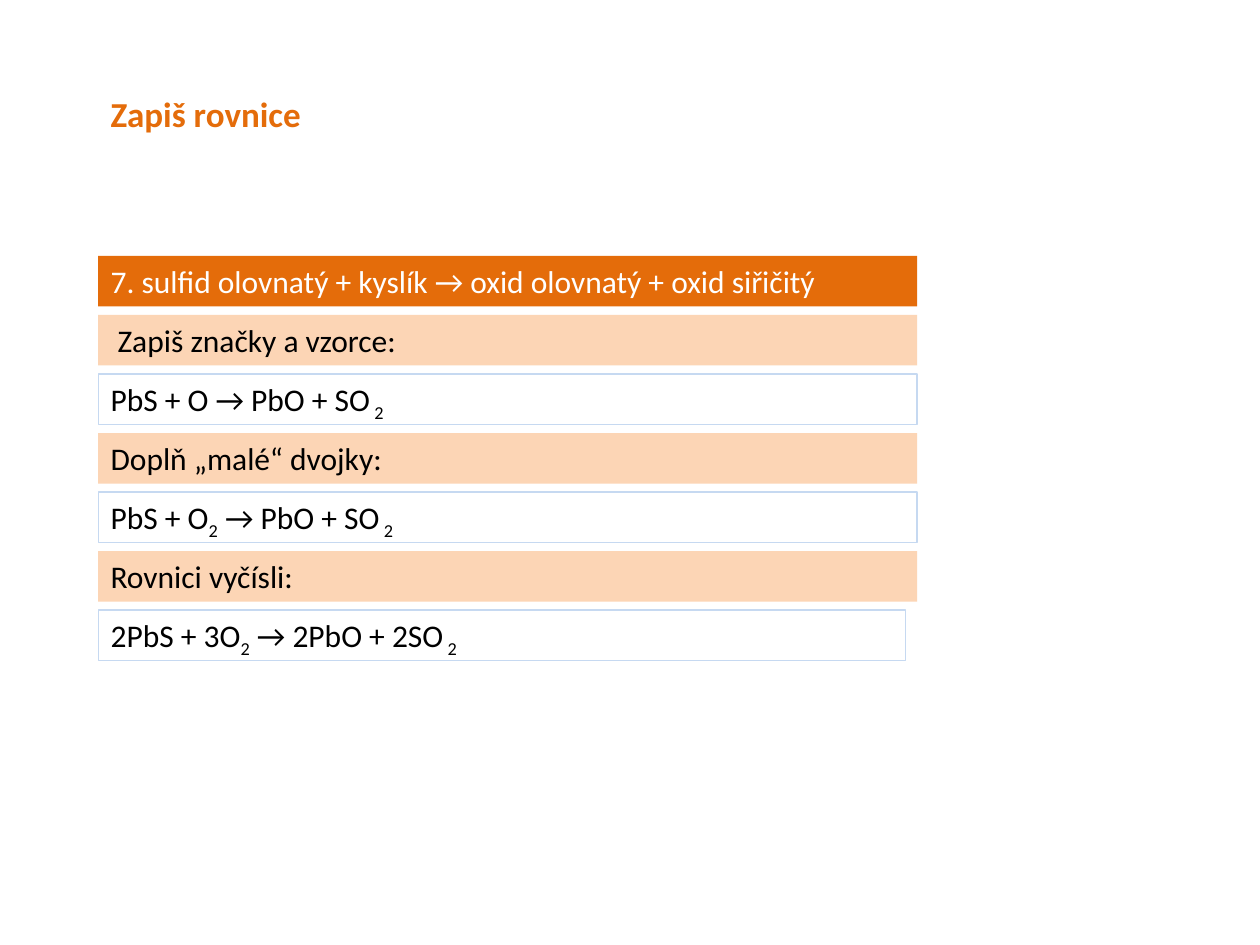
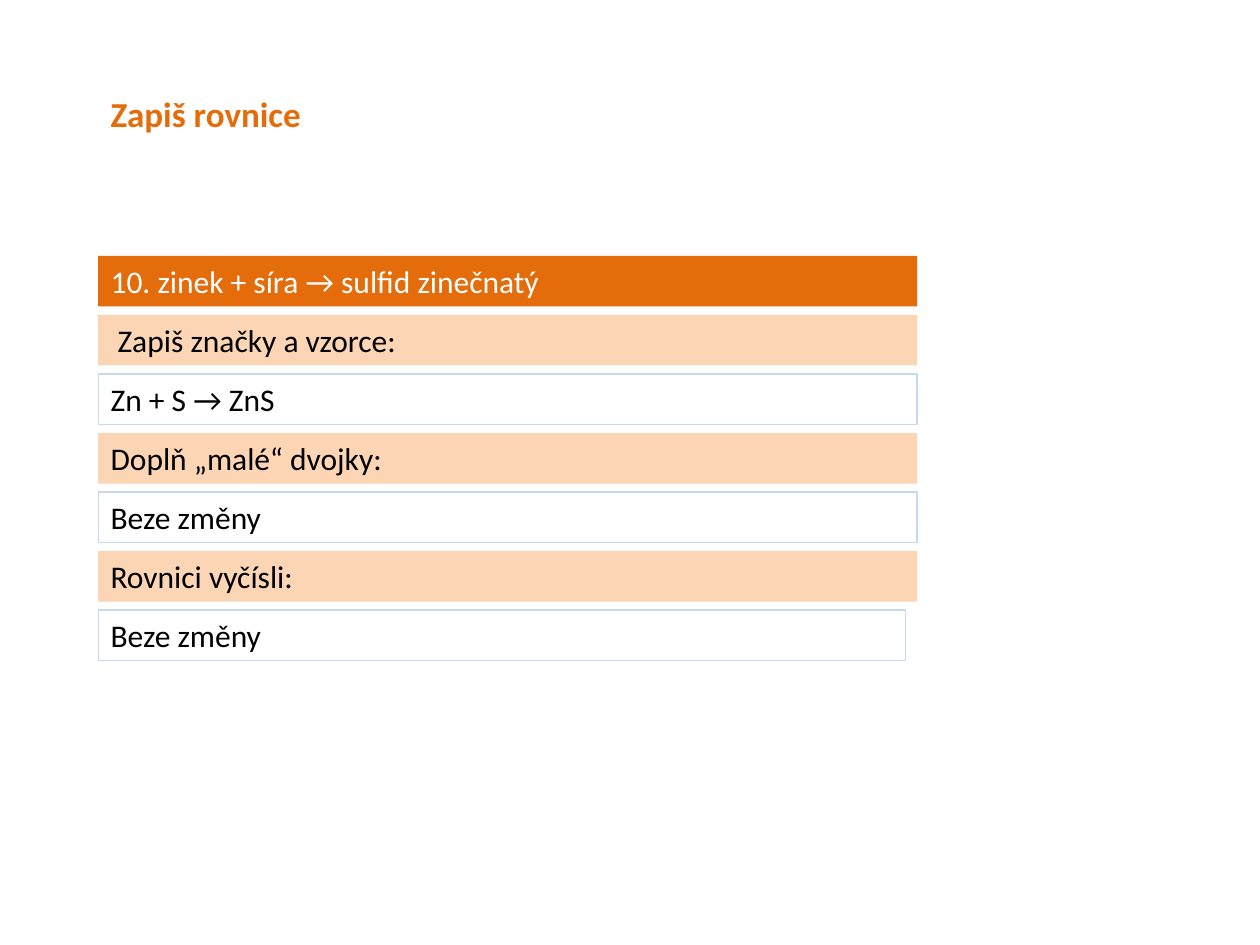
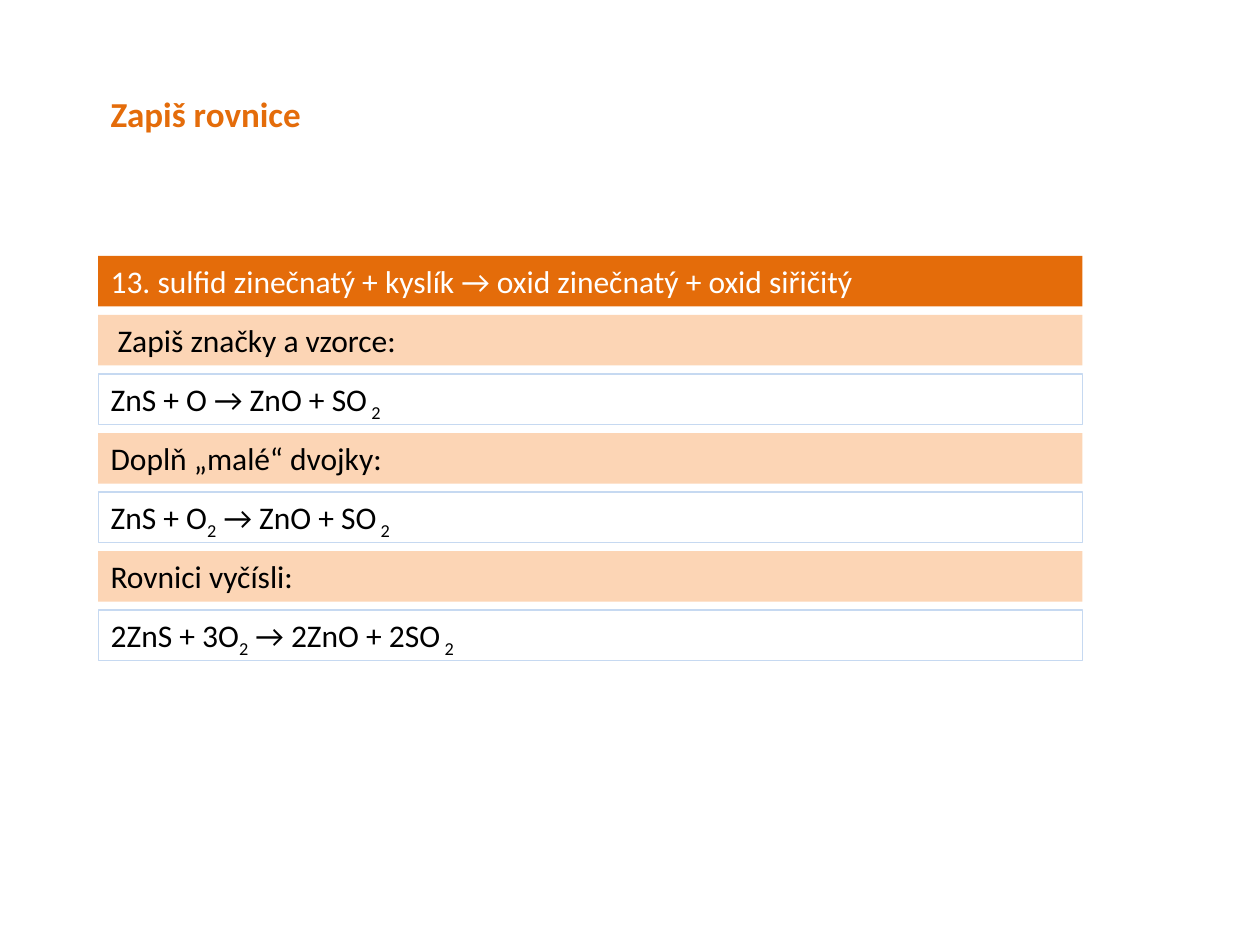
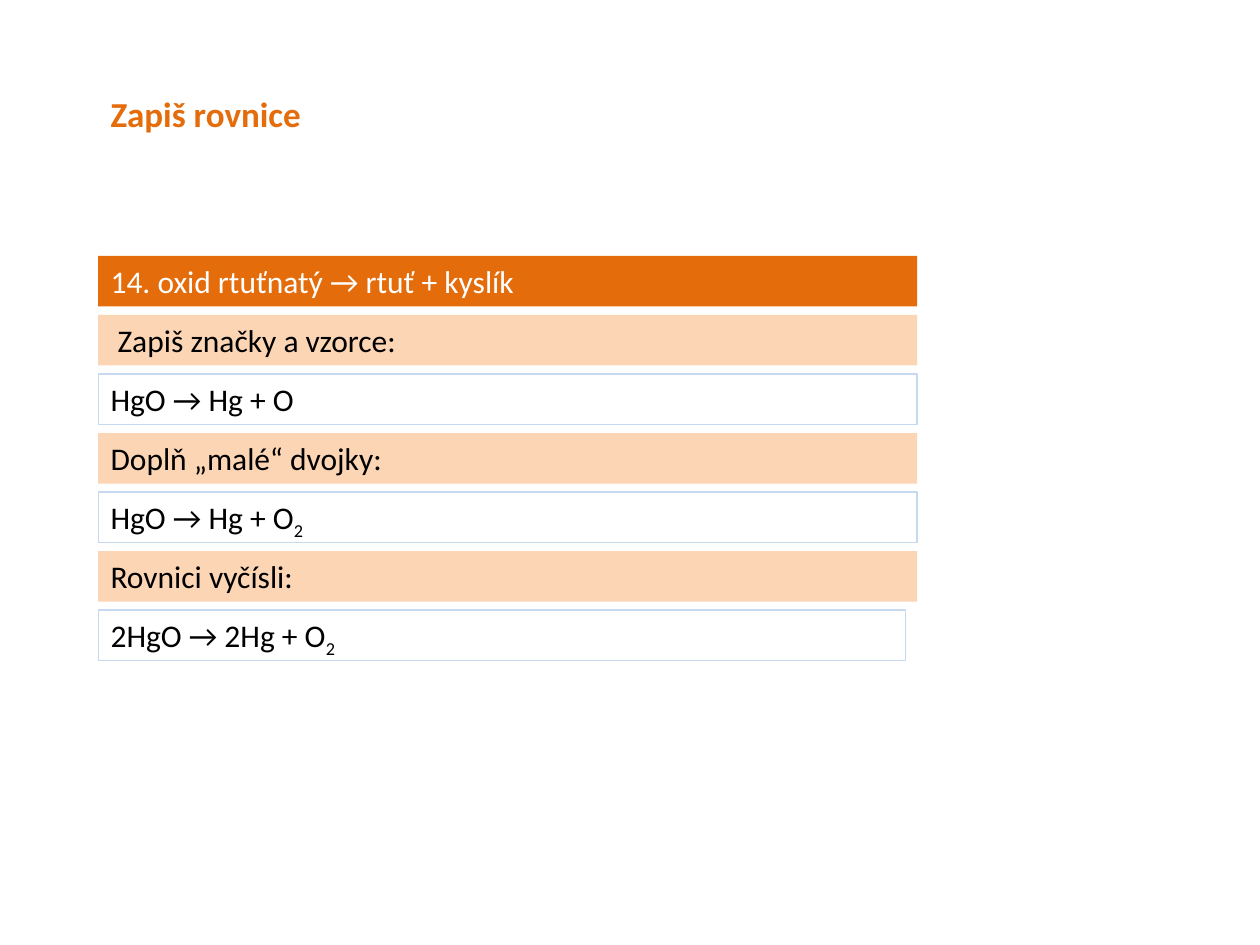
from pptx import Presentation as Deck
from pptx.dml.color import RGBColor as Rgb
from pptx.enum.shapes import MSO_SHAPE as Form
from pptx.enum.text import MSO_ANCHOR as Anchor, MSO_AUTO_SIZE as Fit, PP_ALIGN as Align
from pptx.util import Cm, Pt

HUES = {
    "head": "E46C0A",
    "task": "FCD5B5",
    "edge": "C6D9F1",
    "dark": "000000",
    "light": "FFFFFF",
}
FONT = "Calibri"
LEFT, TOP, STEP, HIGH = 1.98, 5.16, 1.19, 1.02
WIDE, SHORT, LONG = 16.51, 16.28, 19.84
TASKS = (" Zapiš značky a vzorce:", "Doplň „malé“ dvojky:", "Rovnici vyčísli:")
PAGES = (
    ("7. sulfid olovnatý + kyslík → oxid olovnatý + oxid siřičitý", WIDE, SHORT,
     ("PbS + O → PbO + SO_ 2", "PbS + O_2_ → PbO + SO_ 2", "2PbS + 3O_2_ → 2PbO + 2SO_ 2")),
    ("10. zinek + síra → sulfid zinečnatý", WIDE, SHORT,
     ("Zn + S → ZnS", "Beze změny", "Beze změny")),
    ("13. sulfid zinečnatý + kyslík → oxid zinečnatý + oxid siřičitý", LONG, LONG,
     ("ZnS + O → ZnO + SO_ 2", "ZnS + O_2_ → ZnO + SO_ 2", "2ZnS + 3O_2_ → 2ZnO + 2SO_ 2")),
    ("14. oxid rtuťnatý → rtuť + kyslík", WIDE, SHORT,
     ("HgO → Hg + O", "HgO → Hg + O_2", "2HgO → 2Hg + O_2")),
)


def tint(name):
    """Return the named colour."""
    return Rgb.from_string(HUES[name])


def write(frame, text, hue, size=18, bold=False):
    """Add text run by run, with every second part between underscores lowered."""
    frame.word_wrap = True
    para = frame.paragraphs[0]
    para.alignment = Align.LEFT
    for i, part in enumerate(text.split("_")):
        run = para.add_run()
        run.text = part
        font = run.font
        font.name, font.size, font.bold = FONT, Pt(size), bold
        font.color.rgb = tint(hue)
        if i % 2:
            run._r.get_or_add_rPr().set("baseline", "-25000")


def title(slide):
    """Add the shared slide title."""
    frame = slide.shapes.add_textbox(Cm(LEFT), Cm(1.78), Cm(9.73), Cm(HIGH)).text_frame
    frame.vertical_anchor = Anchor.MIDDLE
    write(frame, "Zapiš rovnice", "head", 20, True)


def bar(slide, row, wide, text, fill=None, hue="dark"):
    """Add a bar in the given row, filled or else outlined."""
    box = slide.shapes.add_shape(
        Form.RECTANGLE, Cm(LEFT), Cm(TOP + row * STEP), Cm(wide), Cm(HIGH))
    box.shadow.inherit = False
    if fill:
        box.fill.solid()
        box.fill.fore_color.rgb = tint(fill)
        box.line.fill.background()
    else:
        box.fill.background()
        box.line.color.rgb = tint("edge")
        box.line.width = Pt(0.75)
    frame = box.text_frame
    frame.vertical_anchor = Anchor.TOP
    write(frame, text, hue)
    frame.auto_size = Fit.SHAPE_TO_FIT_TEXT


def page(deck, head, wide, last, steps):
    """Add a slide with one reaction, its tasks and their answers."""
    slide = deck.slides.add_slide(deck.slide_layouts[6])
    bar(slide, 0, wide, head, "head", "light")
    for i, (task, step) in enumerate(zip(TASKS, steps)):
        bar(slide, 2 * i + 1, wide, task, "task")
        bar(slide, 2 * i + 2, last if i == len(TASKS) - 1 else wide, step)
    title(slide)


def main():
    """Build and save the deck."""
    deck = Deck()
    deck.slide_width, deck.slide_height = Cm(25.4), Cm(19.05)
    for data in PAGES:
        page(deck, *data)
    deck.save("out.pptx")


if __name__ == "__main__":
    main()
